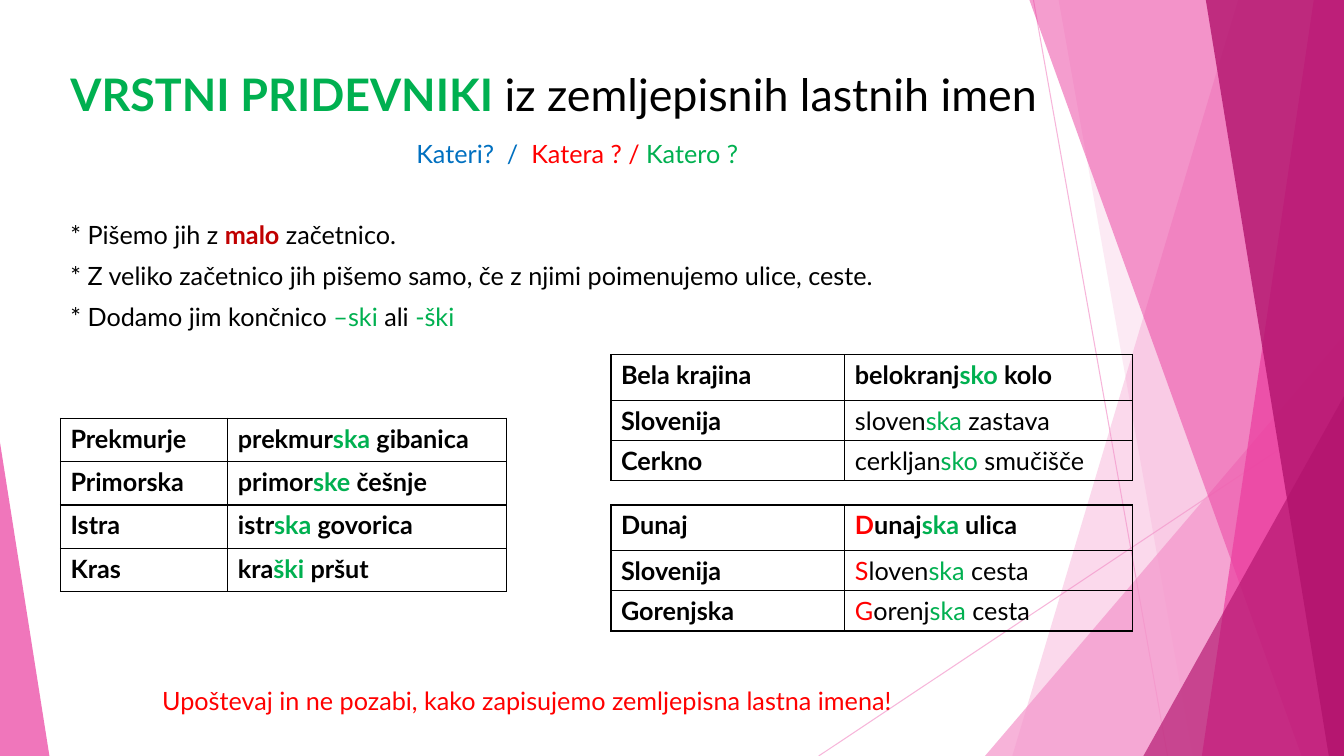
from lxml import etree
from pptx import Presentation
from pptx.dml.color import RGBColor
from pptx.enum.shapes import MSO_CONNECTOR, MSO_SHAPE
from pptx.enum.text import PP_ALIGN
from pptx.oxml import parse_xml
from pptx.oxml.ns import nsdecls, qn
from pptx.util import Pt

PX = 9144
WIDTH, HEIGHT = 1333, 750
STRAIGHT = MSO_CONNECTOR.STRAIGHT
TRIANGLE = MSO_SHAPE.ISOSCELES_TRIANGLE
LEFT, CENTER = PP_ALIGN.LEFT, PP_ALIGN.CENTER
FONT = "Lato"
COLORS = {
    "black": "000000", "green": "00B050", "red": "FF0000",
    "dark red": "C00000", "blue": "0070C0",
    "light pink": "F496CB", "pink": "EB3D9F", "magenta": "B2136D",
}


def set_color(fill, color, alpha):
    fill.solid()
    fill.fore_color.rgb = RGBColor.from_string(COLORS[color])
    node = fill._xPr.find(qn("a:solidFill"))[0]
    etree.SubElement(node, qn("a:alpha")).set("val", str(alpha * 1000))


def write(tf, runs, size=18, align=LEFT):
    p = tf.paragraphs[0]
    p.alignment = align
    p.font.name, p.font.size = FONT, Pt(size)
    for text, color, bold in runs:
        r = p.add_run()
        r.text = text
        r.font.bold = bold
        r.font.color.rgb = RGBColor.from_string(COLORS[color])


prs = Presentation()
prs.slide_width, prs.slide_height = WIDTH * PX, HEIGHT * PX
s = prs.slides.add_slide(prs.slide_layouts[6])

for ends in [(1025, 0, 1158, 750), (1333, 403, 812, 750)]:
    line = s.shapes.add_connector(STRAIGHT, *[v * PX for v in ends])
    line.line.width = Pt(0.75)
    set_color(line.line.fill, "light pink", 70)
    etree.SubElement(line._element.spPr, qn("a:effectLst"))

# ribbons: top x, bottom x; triangles: left, top, width, height, apex
facets = [
    ("light pink", 36, (1228, 1004)),
    ("light pink", 20, (1050, 1183)),
    ("light pink", 72, (977, 333, 356, 417, 1)),
    ("pink", 50, (1021, 1291)),
    ("pink", 70, (1303, 1192)),
    ("magenta", 80, (1196, 1318)),
    ("magenta", 66, (1134, 393, 199, 357, 1)),
    ("pink", 70, (0, 439, 49, 311, 0)),
]
for color, alpha, geometry in facets:
    if len(geometry) == 2:
        top_x, bottom_x = geometry
        outline = s.shapes.build_freeform(top_x, 0, scale=PX)
        outline.add_line_segments([(WIDTH, 0), (WIDTH, HEIGHT), (bottom_x, HEIGHT)])
        sp = outline.convert_to_shape()
    else:
        *box, apex = geometry
        sp = s.shapes.add_shape(TRIANGLE, *[v * PX for v in box])
        sp.adjustments[0] = apex
    set_color(sp.fill, color, alpha)
    sp.line.fill.background()
    sp.shadow.inherit = False

texts = [
    (60, 61, 991, 98, 32, LEFT, [("VRSTNI PRIDEVNIKI ", "green", True),
                                 ("iz zemljepisnih lastnih imen", "black", False)]),
    (355, 132, 435, 71, 18, CENTER, [("Kateri?  /  ", "blue", False),
                                     ("Katera ? / ", "red", False),
                                     ("Katero ?", "green", False)]),
    (60, 213, 361, 40, 18, LEFT, [("* Pišemo jih z ", "black", False),
                                  ("malo", "dark red", True),
                                  (" začetnico.", "black", False)]),
    (60, 253, 912, 40, 18, LEFT, [
        ("* Z veliko začetnico jih pišemo samo, če z njimi poimenujemo ulice, ceste.",
         "black", False)]),
    (60, 294, 409, 40, 18, LEFT, [("* Dodamo jim končnico ", "black", False),
                                  ("–ski ", "green", False),
                                  ("ali ", "black", False),
                                  ("-ški", "green", False)]),
    (151, 675, 788, 40, 18, LEFT, [
        ("Upoštevaj in ne pozabi, kako zapisujemo zemljepisna lastna imena!",
         "red", False)]),
]
for x, y, w, h, size, align, runs in texts:
    tf = s.shapes.add_textbox(x * PX, y * PX, w * PX, h * PX).text_frame
    tf.word_wrap = True
    write(tf, runs, size, align)

# each row: place, bold adjective, capital, stem, ending, noun
tables = [
    (60, 415, (166, 276), (43, 43, 43, 43), [
        ("Prekmurje", True, "", "prekmur", "ska", " gibanica"),
        ("Primorska", True, "", "primor", "ske", " češnje"),
        ("Istra", True, "", "istr", "ska", " govorica"),
        ("Kras", True, "", "kra", "ški", " pršut"),
    ]),
    (606, 352, (232, 285), (45, 40, 40), [
        ("Bela krajina", True, "", "belokranj", "sko", " kolo"),
        ("Slovenija", False, "", "sloven", "ska", " zastava"),
        ("Cerkno", False, "", "cerkljan", "sko", " smučišče"),
    ]),
    (606, 501, (232, 285), (45, 40, 40), [
        ("Dunaj", True, "D", "unaj", "ska", " ulica"),
        ("Slovenija", False, "S", "loven", "ska", " cesta"),
        ("Gorenjska", False, "G", "orenj", "ska", " cesta"),
    ]),
]
for x, y, widths, heights, rows in tables:
    table = s.shapes.add_table(len(rows), 2, x * PX, y * PX,
                               sum(widths) * PX, sum(heights) * PX).table
    table.first_row = table.horz_banding = False
    for column, w in zip(table.columns, widths):
        column.width = w * PX
    for i, (place, bold, *parts) in enumerate(rows):
        table.rows[i].height = heights[i] * PX
        adjective = [(text, color, bold) for text, color in
                     zip(parts, ("red", "black", "green", "black")) if text]
        for j, runs in enumerate([[(place, "black", True)], adjective]):
            cell = table.cell(i, j)
            cell.fill.background()
            write(cell.text_frame, runs)
            for k, side in enumerate(("lnL", "lnR", "lnT", "lnB")):
                cell._tc.tcPr.insert(k, parse_xml(
                    f'<a:{side} {nsdecls("a")} w="12700"><a:solidFill>'
                    f'<a:srgbClr val="{COLORS["black"]}"/></a:solidFill></a:{side}>'))

prs.save("out.pptx")
